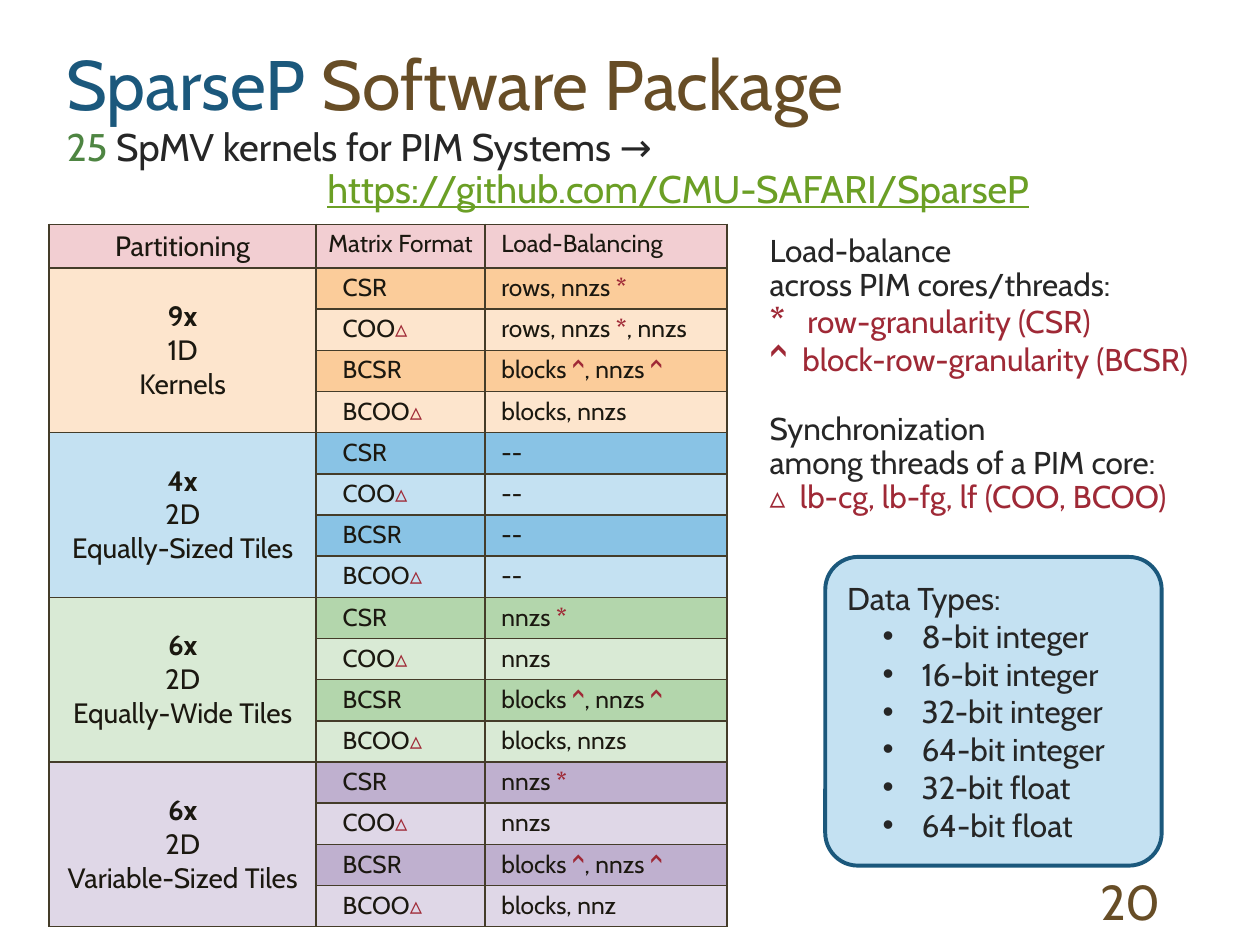
import itertools

import lxml.etree
import pptx
import pptx.dml.color
import pptx.enum.shapes
import pptx.enum.text
import pptx.oxml.ns
import pptx.util

Inches = pptx.util.Inches
Pt = pptx.util.Pt
Align = pptx.enum.text.PP_ALIGN
Anchor = pptx.enum.text.MSO_ANCHOR

DARK, INK, RED = "262626", "1B1810", "9F2936"
NAVY, BROWN, SKY = "1B587C", "674D26", "C4E1F2"
MARKS = "*^▵"


def paint(target, code):
    """Give a colour to a fill or a font."""
    if hasattr(target, "solid"):
        target.solid()
        target.fore_color.rgb = pptx.dml.color.RGBColor.from_string(code)
    else:
        target.color.rgb = pptx.dml.color.RGBColor.from_string(code)


def node(parent, tag, **attrs):
    name = pptx.oxml.ns.qn(tag)
    return lxml.etree.SubElement(parent, name, {k: str(v) for k, v in attrs.items()})


def write(para, text, size=18, color=DARK, bold=False, line=False, font="Cabin"):
    """Add one run of text to a paragraph."""
    run = para.add_run()
    run.text = text
    run.font.name = font
    run.font.size = Pt(size)
    run.font.bold = bold
    if line:
        run.font.underline = True
    paint(run.font, color)


def indent(para, left, first=0, bullet=None):
    props = para._p.get_or_add_pPr()
    props.set("marL", str(Inches(left)))
    props.set("indent", str(Inches(first)))
    if bullet:
        node(props, "a:buFont", typeface="Arial")
        node(props, "a:buChar", char=bullet)


def lines(frame, count, align=Align.LEFT, space=None):
    """Return the given number of paragraphs of a frame."""
    paras = [frame.paragraphs[0]] + [frame.add_paragraph() for _ in range(count - 1)]
    for para in paras:
        para.alignment = align
        if space:
            para.line_spacing = space
    return paras


class Deck:
    edge, thick = "443C29", 1
    pad = 0.04

    def __init__(self):
        self.file = pptx.Presentation()
        self.file.slide_width = Inches(10)
        self.file.slide_height = Inches(7.5)
        self.slide = self.file.slides.add_slide(self.file.slide_layouts[6])

    def text(self, left, top, width, height, anchor=Anchor.TOP):
        box = self.slide.shapes.add_textbox(*map(Inches, (left, top, width, height)))
        box.text_frame.word_wrap = True
        box.text_frame.vertical_anchor = anchor
        return box.text_frame

    def panel(self, left, top, width, height, fill, edge):
        kind = pptx.enum.shapes.MSO_SHAPE.ROUNDED_RECTANGLE
        shape = self.slide.shapes.add_shape(kind, *map(Inches, (left, top, width, height)))
        shape.adjustments[0] = 0.106
        shape.shadow.inherit = False
        paint(shape.fill, fill)
        paint(shape.line.fill, edge)
        shape.line.width = Pt(2.25)
        shape.text_frame.word_wrap = True
        shape.text_frame.vertical_anchor = Anchor.MIDDLE
        return shape.text_frame

    def grid(self, left, top, cols, rows):
        area = map(Inches, (left, top, sum(cols), sum(rows)))
        table = self.slide.shapes.add_table(len(rows), len(cols), *area).table
        table.first_row = table.horz_banding = False
        for col, width in zip(table.columns, cols):
            col.width = Inches(width)
        for row, height in zip(table.rows, rows):
            row.height = Inches(height)
        return table

    def cell(self, cell, fill, left=pad):
        """Set the border, fill and margins of a cell."""
        props = cell._tc.get_or_add_tcPr()
        for side in "LRTB":
            rule = node(props, "a:ln" + side, w=Pt(self.thick))
            node(node(rule, "a:solidFill"), "a:srgbClr", val=self.edge)
        paint(cell.fill, fill)
        cell.margin_left = Inches(left)
        cell.margin_right = cell.margin_top = cell.margin_bottom = Inches(self.pad)


def marked(cell, text):
    """Write a cell whose footnote marks are red and bold."""
    for mark, chars in itertools.groupby(text, lambda char: char in MARKS):
        write(cell.text_frame.paragraphs[0], "".join(chars), size=14,
              color=RED if mark else INK, bold=mark)


def kernels(deck):
    # Group: label lines, pale fill, strong fill, load balancing per format
    mixed = "blocks ^, nnzs ^"
    groups = [
        (("9x", "1D", "Kernels"), "FDE5CD", "FBCC9A",
         ("rows, nnzs *", "rows, nnzs *, nnzs", mixed, "blocks, nnzs")),
        (("4x", "2D", "Equally-Sized Tiles"), SKY, "89C3E5", ("--",) * 4),
        (("6x", "2D", "Equally-Wide Tiles"), "D9EAD5", "B3D6AC",
         ("nnzs *", "nnzs", mixed, "blocks, nnzs")),
        (("6x", "2D", "Variable-Sized Tiles"), "DFD7E7", "BFB0CF",
         ("nnzs *", "nnzs", mixed, "blocks, nnz")),
    ]
    formats = ("CSR", "COO▵", "BCSR", "BCOO▵")
    inset = 0.13
    table = deck.grid(0.39, 1.78, (2.12, 1.34, 1.92), [0.34] + [5.23 / 16] * 16)

    # Header row
    heads = (("Partitioning", 16, Align.CENTER, deck.pad),
             ("Matrix Format", 14, Align.CENTER, deck.pad),
             ("Load-Balancing", 14, Align.LEFT, inset))
    for col, (text, size, align, left) in enumerate(heads):
        cell = table.cell(0, col)
        deck.cell(cell, "F2CED2", left)
        write(lines(cell.text_frame, 1, align)[0], text, size=size, color=INK)

    # Four rows per group
    for index, (label, pale, strong, loads) in enumerate(groups):
        start = 1 + index * len(formats)
        for step, (form, load) in enumerate(zip(formats, loads)):
            row = start + step
            fill = pale if step % 2 else strong
            deck.cell(table.cell(row, 0), pale)
            for col, text, left in ((1, form, 0.21), (2, load, inset)):
                deck.cell(table.cell(row, col), fill, left)
                marked(table.cell(row, col), text)
        head = table.cell(start, 0)
        head.merge(table.cell(start + len(formats) - 1, 0))
        head.vertical_anchor = Anchor.MIDDLE
        for para, text in zip(lines(head.text_frame, 3, Align.CENTER), label):
            write(para, text, size=16, color=INK, bold=text == label[0])


def main():
    deck = Deck()

    # Slide number
    para, = lines(deck.text(7.06, 6.95, 2.25, 0.4, Anchor.MIDDLE), 1, Align.RIGHT)
    write(para, "20", size=28, color=BROWN)

    # Title and subtitle
    para, = lines(deck.text(0.43, 0.24, 9.1, 0.92, Anchor.MIDDLE), 1, space=0.9)
    write(para, "SparseP", size=40, color=NAVY)
    write(para, " Software Package", size=40, color=BROWN)
    lead, link = lines(deck.text(0.43, 0.97, 9.1, 0.8), 2, space=0.9)
    write(lead, "25 ", size=22, color="4E8542")
    write(lead, "SpMV kernels for PIM Systems →", size=22)
    indent(link, 2.07)
    write(link, "https://github.com/CMU-SAFARI/SparseP", size=22, color="6B9F25", line=True)

    # Legend: mark, mark size, hanging indent, text
    legend = [
        (None, 0, 0, "Load-balance"),
        (None, 0, 0, "across PIM cores/threads:"),
        ("*", 20, 0.3, "row-granularity (CSR)"),
        ("^", 20, 0.26, "block-row-granularity (BCSR)"),
        (None, 0, 0, "Synchronization"),
        (None, 0, 0, "among threads of a PIM core:"),
        ("▵", 18, 0.24, "lb-cg, lb-fg, lf (COO, BCOO)"),
    ]
    paras = lines(deck.text(6.01, 1.82, 3.76, 2.34), len(legend), space=0.9)
    for para, (mark, size, hang, text) in zip(paras, legend):
        if mark:
            indent(para, hang, -hang)
            write(para, mark + "\t", size=size, color=RED, bold=True)
        write(para, text, color=RED if mark else DARK)
    paras[4].space_before = Pt(19.7)

    # Data types
    types = [f"{bits}-bit integer" for bits in (8, 16, 32, 64)]
    types += [f"{bits}-bit float" for bits in (32, 64)]
    panel = deck.panel(6.55, 4.42, 2.67, 2.45, SKY, NAVY)
    head, *items = lines(panel, len(types) + 1)
    write(head, "Data Types:")
    for para, text in zip(items, types):
        indent(para, 0.59, -0.31, "•")
        write(para, text)

    # Kernel table
    kernels(deck)
    deck.file.save("out.pptx")


if __name__ == "__main__":
    main()
